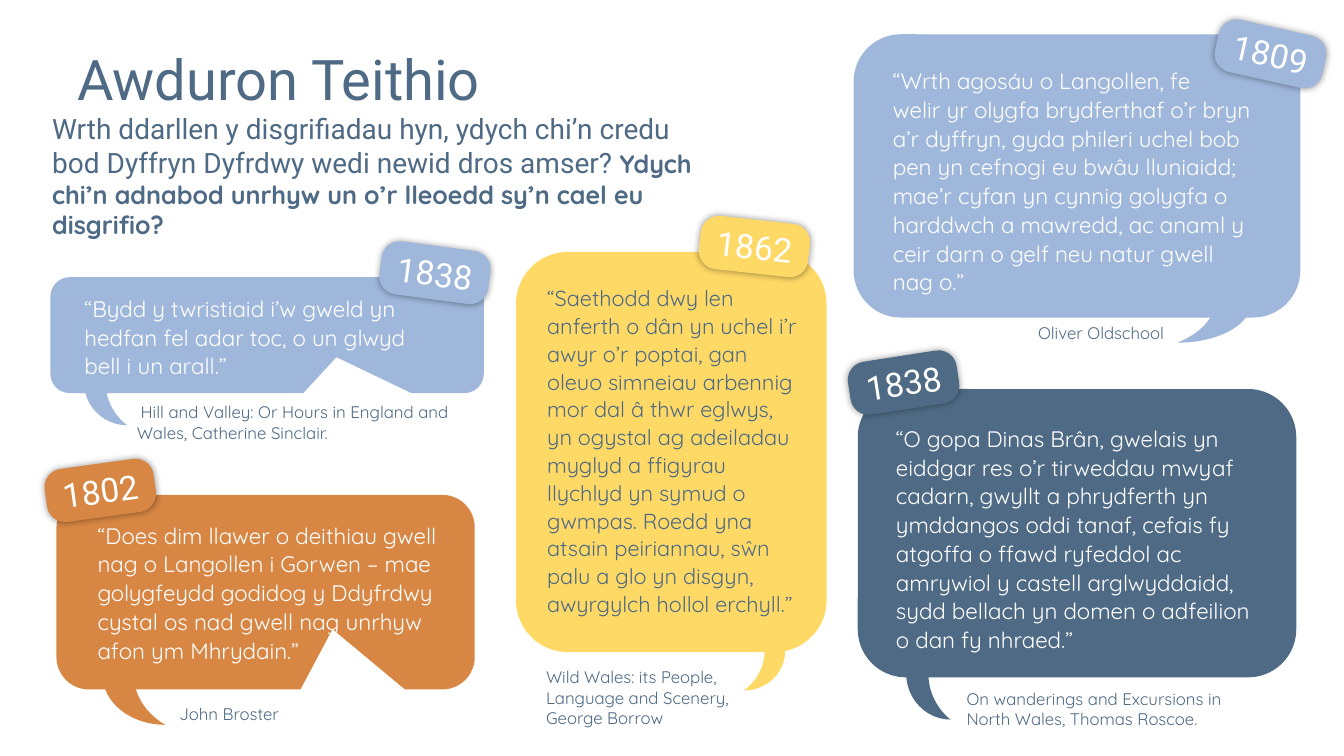
from dataclasses import dataclass
from typing import NamedTuple

from lxml import etree
from pptx import Presentation
from pptx.dml.color import RGBColor
from pptx.enum import shapes, text
from pptx.oxml.ns import qn
from pptx.util import Pt

SKY, GOLD, RUST, NAVY, WHITE = "9FB7DB", "FFD966", "D78643", "4E6A84", "FFFFFF"
SHAPE = shapes.MSO_SHAPE
BADGE_WIDTH, BADGE_HEIGHT = 78.5, 38.2


class Box(NamedTuple):
    left: float
    top: float
    width: float
    height: float


class Style(NamedTuple):
    size: float
    color: str
    font: str = "Quicksand"
    bold: bool = False


@dataclass
class Quote:
    fill: str
    bubble: Box
    tail: Box
    words_box: Box
    words: str
    year: str
    badge_at: tuple[float, float]
    tilt: float
    source_box: Box
    source: str
    ink: str = WHITE
    size: float = 16
    notched: bool = False
    tail_left: bool = False
    source_spacing: float = 1
    source_indent: float = 0


QUOTES = [
    Quote(GOLD, Box(368.6, 180, 221.8, 285.8), Box(531.4, 436.3, 29.5, 56.9),
          Box(383.8, 198.7, 196.6, 247),
          "“Saethodd dwy len anferth o dân yn uchel i’r awyr o’r poptai, gan "
          "oleuo simneiau arbennig mor dal â thwr eglwys, yn ogystal ag "
          "adeiladau myglyd a ffigyrau llychlyd yn symud o gwmpas. Roedd yna "
          "atsain peiriannau, sŵn palu a glo yn disgyn, awyrgylch hollol erchyll.”",
          "1862", (499.7, 157), 6.2, Box(383, 473, 158.4, 51.1),
          "Wild Wales: its People, Language and Scenery, George Borrow",
          ink=NAVY, size=15.5, tail_left=True),
    Quote(RUST, Box(40.3, 353.5, 298.8, 139), Box(73.4, 447.1, 44.6, 70.6),
          Box(62.6, 367.9, 267.1, 110.9),
          "“Does dim llawer o deithiau gwell nag o Langollen i Gorwen – mae "
          "golygfeydd godidog y Ddyfrdwy cystal os nad gwell nag unrhyw afon "
          "ym Mhrydain.”",
          "1802", (32.4, 331.2), -7.9, Box(121, 499, 100, 21.6),
          "John Broster", notched=True),
    Quote(SKY, Box(36, 198, 309.6, 82.8), Box(59.8, 241.2, 31, 62.6),
          Box(53.3, 205.9, 266.4, 69.8),
          "“Bydd y twristiaid i’w gweld yn hedfan fel adar toc, o un glwyd "
          "bell i un arall.”",
          "1838", (271.4, 175.7), 7.6, Box(90.7, 282.2, 258.5, 37.4),
          "Hill and Valley: Or Hours in England and Wales, Catherine Sinclair.",
          notched=True, source_spacing=1.07, source_indent=2.7),
    Quote(SKY, Box(609.8, 24.5, 319, 202.3), Box(841, 187.9, 52.6, 56.9),
          Box(630.7, 43.2, 283, 172.1),
          "“Wrth agosáu o Langollen, fe\nwelir yr olygfa brydferthaf o’r bryn "
          "a’r dyffryn, gyda phileri uchel bob pen yn cefnogi eu bwâu "
          "lluniaidd; mae’r cyfan yn cynnig golygfa o harddwch a mawredd, ac "
          "anaml y ceir darn o gelf neu natur gwell\nnag o.”",
          "1809", (868.3, 19.4), 12.6, Box(734.4, 226.8, 154.1, 21.6),
          "Oliver Oldschool", tail_left=True),
    Quote(NAVY, Box(612.7, 277.9, 313.2, 205.9), Box(647.3, 447.8, 31.7, 66.2),
          Box(632.9, 298.8, 277.2, 172.1),
          "“O gopa Dinas Brân, gwelais yn eiddgar res o’r tirweddau mwyaf "
          "cadarn, gwyllt a phrydferth yn ymddangos oddi tanaf, cefais fy "
          "atgoffa o ffawd ryfeddol ac amrywiol y castell arglwyddaidd, sydd "
          "bellach yn domen o adfeilion o dan fy nhraed.”",
          "1838", (606.2, 254.2), -8.8, Box(683.3, 488.2, 223.9, 36),
          "On wanderings and Excursions in North Wales, Thomas Roscoe."),
]


def rgb(value: str) -> RGBColor:
    return RGBColor.from_string(value)


def add_run(paragraph, words: str, style: Style) -> None:
    """Add words in one style; a newline becomes a line break."""
    for number, line in enumerate(words.split("\n")):
        if number:
            paragraph.add_line_break()
        run = paragraph.add_run()
        run.text = line
        run.font.size = Pt(style.size)
        run.font.name = style.font
        run.font.bold = style.bold
        run.font.color.rgb = rgb(style.color)


def add_words(slide, box: Box, runs: list[tuple[str, Style]],
              spacing: float = 1, indent: float = 0) -> None:
    frame = slide.shapes.add_textbox(*map(Pt, box)).text_frame
    frame.word_wrap = True
    paragraph = frame.paragraphs[0]
    paragraph.line_spacing = spacing
    if indent:
        paragraph._p.get_or_add_pPr().set("indent", str(Pt(indent)))
    for words, style in runs:
        add_run(paragraph, words, style)


def add_filled(slide, kind: SHAPE, box: Box, fill: str):
    shape = slide.shapes.add_shape(kind, *map(Pt, box))
    shape.fill.solid()
    shape.fill.fore_color.rgb = rgb(fill)
    shape.line.fill.background()
    shape.shadow.inherit = False
    return shape


def add_glow_shadow(shape) -> None:
    """Put a soft, centred shadow around the shape."""
    effects = shape._element.spPr.find(qn("a:effectLst"))
    shadow = etree.SubElement(effects, qn("a:outerShdw"), blurRad=str(Pt(5)),
                              dist="0", dir="0", algn="ctr", rotWithShape="0")
    black = etree.SubElement(shadow, qn("a:srgbClr"), val="000000")
    etree.SubElement(black, qn("a:alpha"), val="40000")


def add_badge(slide, quote: Quote) -> None:
    box = Box(*quote.badge_at, BADGE_WIDTH, BADGE_HEIGHT)
    badge = add_filled(slide, SHAPE.ROUNDED_RECTANGLE, box, quote.fill)
    badge.adjustments[0] = 0.34
    badge.rotation = quote.tilt
    add_glow_shadow(badge)
    badge.text_frame.vertical_anchor = text.MSO_ANCHOR.MIDDLE
    paragraph = badge.text_frame.paragraphs[0]
    paragraph.alignment = text.PP_ALIGN.CENTER
    add_run(paragraph, quote.year, Style(24, WHITE, "Roboto"))


def add_quote(slide, quote: Quote) -> None:
    tail = add_filled(slide, SHAPE.MOON, quote.tail, quote.fill)
    if quote.tail_left:
        tail._element.spPr.find(qn("a:xfrm")).set("flipH", "1")
    kind = SHAPE.ROUNDED_RECTANGULAR_CALLOUT if quote.notched else SHAPE.ROUNDED_RECTANGLE
    bubble = add_filled(slide, kind, quote.bubble, quote.fill)
    if quote.notched:
        bubble.adjustments[0] = 0.16
        bubble.adjustments[1] = 0.19
    add_words(slide, quote.words_box,
              [(quote.words, Style(quote.size, quote.ink))], spacing=1.07)
    add_words(slide, quote.source_box, [(quote.source, Style(12, NAVY))],
              quote.source_spacing, quote.source_indent)
    add_badge(slide, quote)


def main() -> None:
    deck = Presentation()
    deck.slide_width, deck.slide_height = Pt(960), Pt(540)
    slide = deck.slides.add_slide(deck.slide_layouts[6])
    add_words(slide, Box(30.2, 76.3, 487.4, 101.5), [
        ("Wrth ddarllen y disgrifiadau hyn, ydych chi’n credu bod Dyffryn "
         "Dyfrdwy wedi newid dros amser? ", Style(20, NAVY, "Roboto")),
        ("Ydych chi’n adnabod unrhyw un o’r lleoedd sy’n cael eu disgrifio?",
         Style(18, NAVY, bold=True)),
    ])
    for quote in QUOTES:
        add_quote(slide, quote)
    add_words(slide, Box(48.2, 25.2, 676, 55.4),
              [("Awduron Teithio", Style(40, NAVY, "Roboto"))], spacing=1.07)
    deck.save("out.pptx")


if __name__ == "__main__":
    main()
